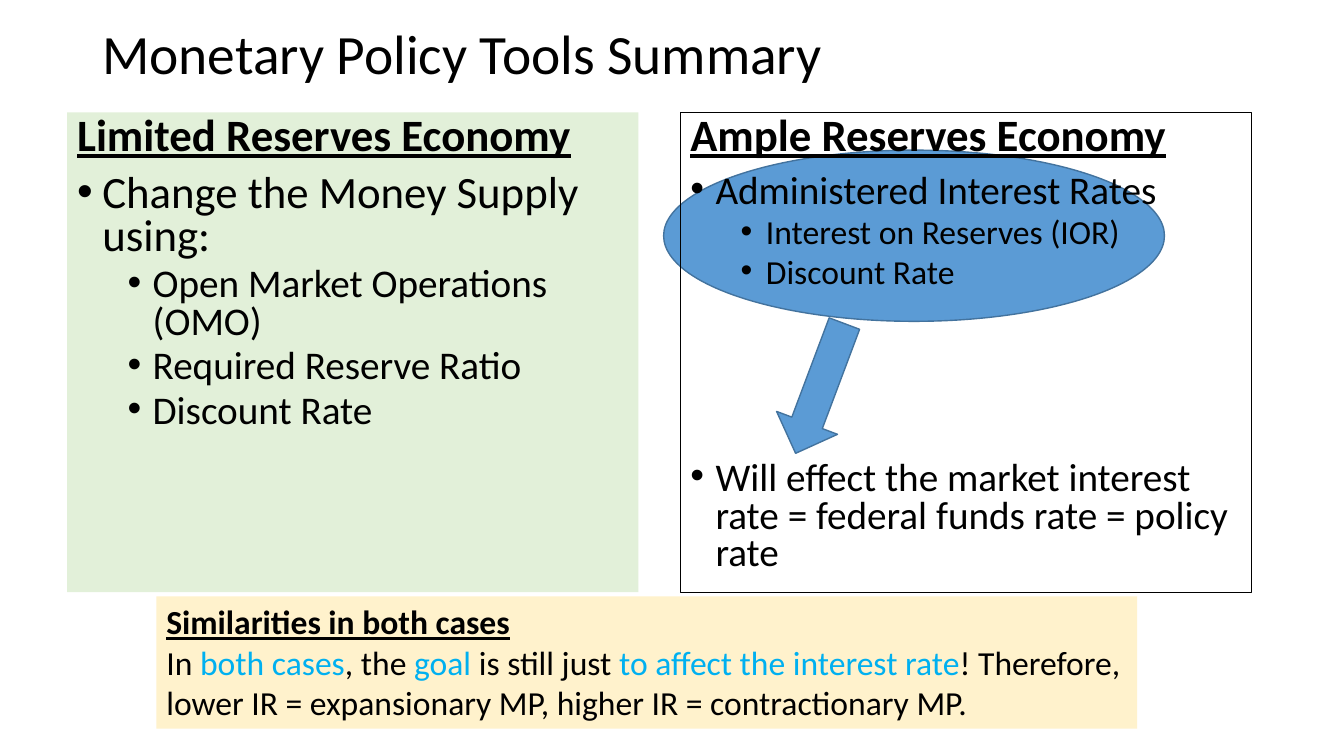
from dataclasses import dataclass

from lxml import etree
from pptx import Presentation
from pptx import util as u
from pptx.dml.color import RGBColor
from pptx.enum import shapes, text
from pptx.oxml.ns import qn


@dataclass(frozen=True)
class Theme:
    font: str = "Calibri"
    ink: str = "000000"
    blue: str = "5B9BD5"
    blue_edge: str = "43739E"
    green: str = "E2F0D9"
    cream: str = "FFF2CC"
    accent: str = "00B0F0"
    title: float = 39.6
    large: int = 32
    medium: int = 28
    small: int = 24


THEME = Theme()
INDENT = 24
LEVEL_STEP = 48


def px(length):
    return u.Emu(length * 9525)


def color(value):
    return RGBColor.from_string(value)


def add_block(slide, kind, box, fill=None, edge=None, edge_width=1):
    shape = slide.shapes.add_shape(kind, *map(px, box))
    shape.shadow.inherit = False
    if fill:
        shape.fill.solid()
        shape.fill.fore_color.rgb = color(fill)
    else:
        shape.fill.background()
    if edge:
        shape.line.color.rgb = color(edge)
        shape.line.width = u.Pt(edge_width)
    else:
        shape.line.fill.background()
    return shape


def set_frame(shape, anchor):
    frame = shape.text_frame
    frame.word_wrap = True
    frame.vertical_anchor = anchor
    return frame


def next_paragraph(frame):
    first = frame.paragraphs[0]
    return frame.add_paragraph() if first.runs else first


def style_paragraph(paragraph, size, heading=False):
    paragraph.alignment = text.PP_ALIGN.LEFT
    font = paragraph.font
    font.name = THEME.font
    font.size = u.Pt(size)
    font.color.rgb = color(THEME.ink)
    font.bold = heading
    font.underline = heading


def add_bullet(paragraph, level):
    properties = paragraph._p.get_or_add_pPr()
    properties.set("marL", str(px(INDENT + LEVEL_STEP * level)))
    properties.set("indent", str(-px(INDENT)))
    etree.SubElement(properties, qn("a:buFont")).set("typeface", "Arial")
    etree.SubElement(properties, qn("a:buChar")).set("char", "•")


def add_title(slide, box, wording):
    shape = slide.shapes.add_textbox(*map(px, box))
    paragraph = set_frame(shape, text.MSO_ANCHOR.MIDDLE).paragraphs[0]
    paragraph.text = wording
    paragraph.line_spacing = 0.9
    style_paragraph(paragraph, THEME.title)


def add_economy(slide, box, heading, points, fill=None, edge=None):
    panel = add_block(slide, shapes.MSO_SHAPE.RECTANGLE, box, fill, edge, 0.75)
    frame = set_frame(panel, text.MSO_ANCHOR.TOP)
    title = next_paragraph(frame)
    title.text = heading
    title.line_spacing = 0.8
    title.space_before = u.Pt(10)
    style_paragraph(title, THEME.large, heading=True)
    for wording, level, size, space in points:
        paragraph = next_paragraph(frame)
        paragraph.text = wording
        paragraph.level = level
        paragraph.line_spacing = 0.8
        paragraph.space_before = u.Pt(space)
        add_bullet(paragraph, level)
        style_paragraph(paragraph, size)


def add_similarities(slide, box, heading, phrases):
    panel = add_block(slide, shapes.MSO_SHAPE.RECTANGLE, box, THEME.cream)
    frame = set_frame(panel, text.MSO_ANCHOR.TOP)
    title = next_paragraph(frame)
    title.text = heading
    style_paragraph(title, THEME.small, heading=True)
    sentence = next_paragraph(frame)
    style_paragraph(sentence, THEME.small)
    for position, phrase in enumerate(phrases):
        run = sentence.add_run()
        run.text = phrase
        run.font.color.rgb = color(THEME.accent if position % 2 else THEME.ink)


def add_summary_slide(presentation):
    slide = presentation.slides.add_slide(presentation.slide_layouts[6])
    left, top, width, height, gap = 64, 107, 544, 457, 40
    right = left + width + gap
    add_block(slide, shapes.MSO_SHAPE.OVAL, (right - 16, top + 36, 477, 163),
              THEME.blue, THEME.blue_edge)
    add_title(slide, (88, 20, 1104, 68), "Monetary Policy Tools Summary")
    add_economy(slide, (left, top, width, height), "Limited Reserves Economy", [
        ("Change the Money Supply using:", 0, THEME.large, 10),
        ("Open Market Operations (OMO)", 1, THEME.medium, 5),
        ("Required Reserve Ratio", 1, THEME.medium, 5),
        ("Discount Rate", 1, THEME.medium, 5),
    ], fill=THEME.green)
    add_economy(slide, (right, top, width, height), "Ample Reserves Economy", [
        ("Administered Interest Rates", 0, THEME.medium, 10),
        ("Interest on Reserves (IOR)", 1, THEME.small, 5),
        ("Discount Rate", 1, THEME.small, 5),
        ("Will effect the market interest rate = federal funds rate = policy rate",
         0, THEME.medium, 122),
    ], edge=THEME.ink)
    arrow = add_block(slide, shapes.MSO_SHAPE.DOWN_ARROW,
                      (right + 102, top + 197, 62, 132), THEME.blue, THEME.blue_edge)
    arrow.rotation = 20.6
    add_similarities(slide, (149, 568, 934, 126), "Similarities in both cases", [
        "In ", "both cases", ", the ", "goal", " is still just ",
        "to affect the interest rate",
        "! Therefore, lower IR = expansionary MP, higher IR = contractionary MP.",
    ])


def main():
    presentation = Presentation()
    presentation.slide_width = px(1280)
    presentation.slide_height = px(720)
    add_summary_slide(presentation)
    presentation.save("out.pptx")


if __name__ == "__main__":
    main()
